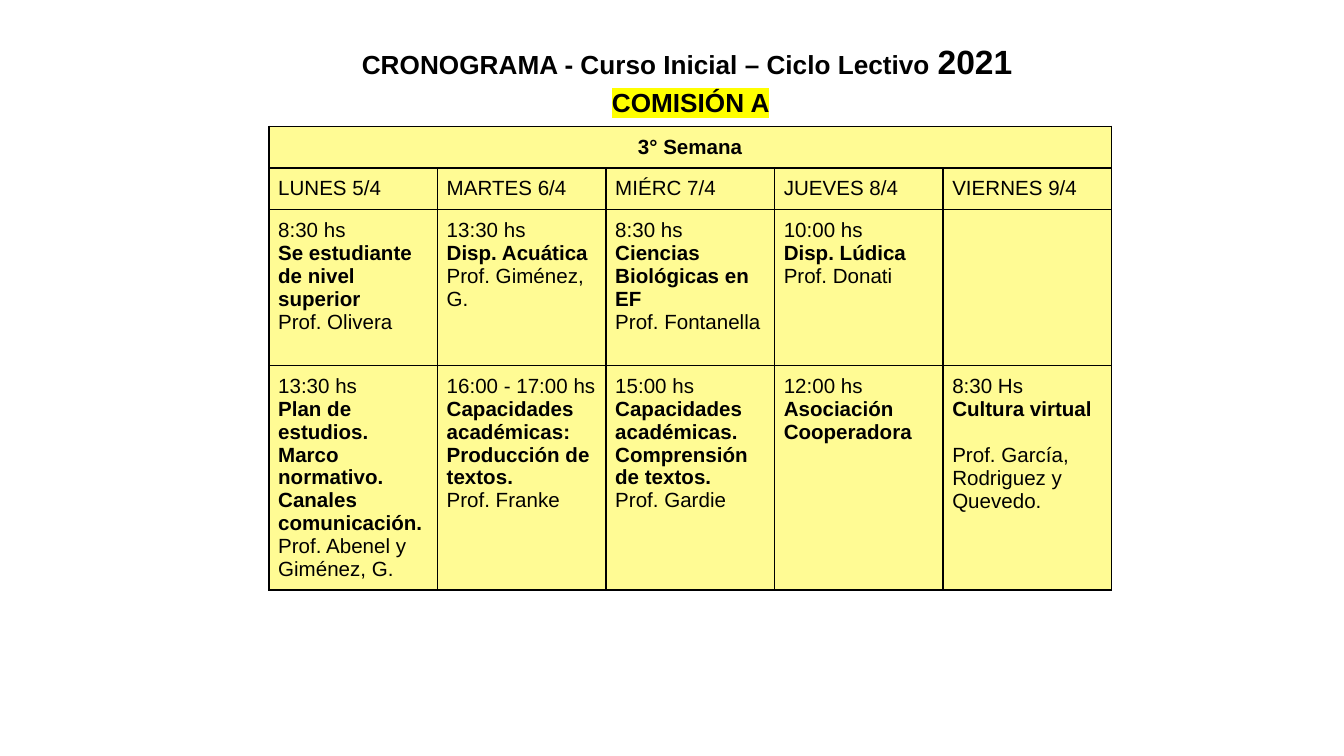
from lxml import etree
from pptx import Presentation
from pptx.dml.color import RGBColor
from pptx.enum.text import MSO_ANCHOR, MSO_AUTO_SIZE, PP_ALIGN
from pptx.oxml.ns import qn
from pptx.util import Inches, Pt

CENTER, LEFT = PP_ALIGN.CENTER, PP_ALIGN.LEFT
TOP = MSO_ANCHOR.TOP
NO_AUTOFIT = MSO_AUTO_SIZE.NONE
TITLE_ONLY = 5
TABLE_WIDTH = 6.27
ROW_HEIGHTS = [0.31, 0.31, 1.16, 1.67]

DAYS = ["LUNES 5/4", "MARTES 6/4", "MIÉRC 7/4", "JUEVES 8/4", "VIERNES 9/4"]
FIRST_CLASSES = [
    ("8:30 hs", "Se estudiante de nivel superior", "Prof. Olivera"),
    ("13:30 hs", "Disp. Acuática", "Prof. Giménez, G."),
    ("8:30 hs", "Ciencias Biológicas en EF", "Prof. Fontanella"),
    ("10:00 hs", "Disp. Lúdica", "Prof. Donati"),
    (),
]
SECOND_CLASSES = [
    ("13:30 hs", "Plan de estudios. Marco normativo. Canales comunicación.",
     "Prof. Abenel y Giménez, G."),
    ("16:00 - 17:00 hs", "Capacidades académicas: Producción de textos.", "Prof. Franke"),
    ("15:00 hs", "Capacidades académicas. Comprensión de textos.", "Prof. Gardie"),
    ("12:00 hs", "Asociación Cooperadora"),
    ("8:30 Hs", "Cultura virtual", "Prof. García, Rodriguez y Quevedo."),
]


def color(value):
    return RGBColor.from_string(value)


def add_text(paragraph, text, size=11, bold=False, font="Arial", fill="000000", highlight=None):
    run = paragraph.add_run()
    run.text = text
    run.font.size = Pt(size)
    run.font.bold = bold
    run.font.color.rgb = color(fill)
    if highlight:
        mark = etree.SubElement(run.font._element, qn("a:highlight"))
        etree.SubElement(mark, qn("a:srgbClr"), val=highlight)
    run.font.name = font


class Schedule:
    """Holds the style and the current slide of a weekly schedule."""

    def __init__(self, slide, fill="FFFB94", line="000000", margin=0.07):
        self.slide = slide
        self.fill = fill
        self.line = line
        self.margin = Inches(margin)

    def title(self, lines, left, top, width, height):
        shape = self.slide.shapes.title
        shape.left, shape.top = Inches(left), Inches(top)
        shape.width, shape.height = Inches(width), Inches(height)
        frame = shape.text_frame
        frame.word_wrap = True
        frame.auto_size = NO_AUTOFIT
        frame.vertical_anchor = TOP
        frame.margin_top = frame.margin_bottom = Inches(0.05)
        for index, runs in enumerate(lines):
            paragraph = frame.add_paragraph() if index else frame.paragraphs[0]
            paragraph.alignment = CENTER
            paragraph.line_spacing = 1.15
            for text, style in runs:
                add_text(paragraph, text, **style)

    def table(self, rows, left, top):
        frame = self.slide.shapes.add_table(
            len(rows), len(DAYS), Inches(left), Inches(top),
            Inches(TABLE_WIDTH), Inches(sum(ROW_HEIGHTS)))
        table = frame.table
        for row, height, contents in zip(table.rows, ROW_HEIGHTS, rows):
            row.height = Inches(height)
            for cell, entries in zip(row.cells, contents):
                self.cell(cell, entries)
        table.cell(0, 0).merge(table.cell(0, len(DAYS) - 1))
        return table

    def cell(self, cell, entries):
        cell.margin_left = cell.margin_right = self.margin
        cell.margin_top = cell.margin_bottom = self.margin
        properties = cell._tc.get_or_add_tcPr()
        for side in ("lnL", "lnR", "lnT", "lnB"):
            border = etree.SubElement(properties, qn(f"a:{side}"), w=str(Pt(1)))
            solid = etree.SubElement(border, qn("a:solidFill"))
            etree.SubElement(solid, qn("a:srgbClr"), val=self.line)
        cell.fill.solid()
        cell.fill.fore_color.rgb = color(self.fill)
        frame = cell.text_frame
        for index, text in enumerate(entries):
            paragraph = frame.add_paragraph() if index else frame.paragraphs[0]
            paragraph.alignment = LEFT
            add_text(paragraph, text, bold=index == 1)


def main():
    presentation = Presentation()
    presentation.slide_width = Inches(10)
    presentation.slide_height = presentation.slide_width * 9 // 16
    slide = presentation.slides.add_slide(presentation.slide_layouts[TITLE_ONLY])
    schedule = Schedule(slide)

    heading = {"size": 14, "bold": True}
    schedule.title([
        [("CRONOGRAMA - Curso Inicial – Ciclo Lectivo ", heading),
         ("2021", {"size": 18, "bold": True}),
         (" ", {"size": 14})],
        [("COMISIÓN A", {**heading, "highlight": "FFFF00"})],
    ], 2.01, 0.21, 6.26, 0.96)

    blank_week = [()] * len(DAYS)
    day_names = [(day,) for day in DAYS]
    table = schedule.table([blank_week, day_names, FIRST_CLASSES, SECOND_CLASSES], 2, 0.94)
    week = table.cell(0, 0).text_frame.paragraphs[0]
    week.alignment = CENTER
    add_text(week, "3° Semana", bold=True)
    table.cell(3, 4).text_frame.paragraphs[2].space_before = Pt(12.5)

    presentation.save("out.pptx")


if __name__ == "__main__":
    main()
